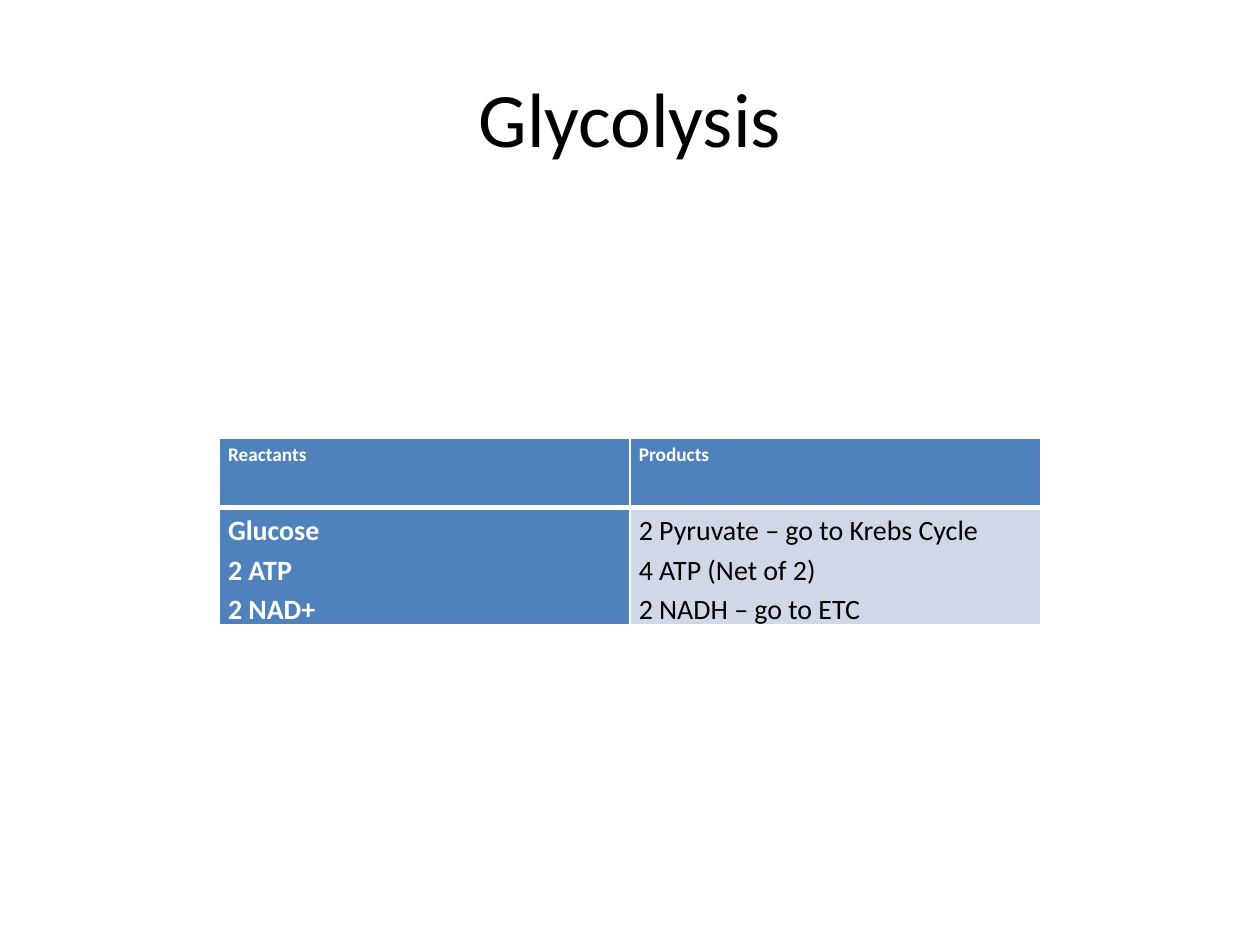
import pptx
import pptx.dml.color
import pptx.enum.text
import pptx.oxml
import pptx.oxml.ns
import pptx.util
import lxml.etree

WIDTH, HEIGHT = 10, 7.5
BLUE, PALE, WHITE, BLACK = "4F81BD", "D0D8E8", "FFFFFF", "000000"


def color(value):
    return pptx.dml.color.RGBColor.from_string(value)


def apply(target, values):
    for name, value in values.items():
        setattr(target, name, value)


class SlideBuilder:
    """Holds the style and the current slide; places are shares of its size."""

    font = "Calibri"
    cell_format = {
        "margin_left": pptx.util.Inches(0.07),
        "margin_right": pptx.util.Inches(0.07),
        "margin_top": pptx.util.Inches(0.01),
        "margin_bottom": 0,
    }
    cell_paragraph = {"line_spacing": 1.15, "space_after": pptx.util.Pt(10)}

    def __init__(self, prs):
        self.prs = prs
        self.s = prs.slides.add_slide(prs.slide_layouts[6])

    def box(self, x, y, w, h):
        sw, sh = self.prs.slide_width, self.prs.slide_height
        return [round(v) for v in (x * sw, y * sh, w * sw, h * sh)]

    def paragraph(self, p, text, size, hue, bold=False):
        p.text = text
        for r in p.runs:
            apply(r.font, {"name": self.font, "size": pptx.util.Pt(size), "bold": bold})
            r.font.color.rgb = color(hue)
        # Line breaks take the size of the text around them
        for br in p._p.findall(pptx.oxml.ns.qn("a:br")):
            lxml.etree.SubElement(br, pptx.oxml.ns.qn("a:rPr"), sz=str(size * 100))

    def title(self, text, place, size):
        tf = self.s.shapes.add_textbox(*self.box(*place)).text_frame
        apply(tf, {"word_wrap": True,
                   "vertical_anchor": pptx.enum.text.MSO_ANCHOR.MIDDLE})
        p = tf.paragraphs[0]
        p.alignment = pptx.enum.text.PP_ALIGN.CENTER
        self.paragraph(p, text, size, BLACK)

    def border(self, cell, side, width):
        ln = pptx.oxml.parse_xml(
            f'<a:ln{side} {pptx.oxml.ns.nsdecls("a")} w="{pptx.util.Pt(width)}">'
            f'<a:solidFill><a:srgbClr val="{WHITE}"/></a:solidFill></a:ln{side}>')
        cell._tc.get_or_add_tcPr().append(ln)

    def cell(self, cell, text, size, fill, hue, bold, borders):
        apply(cell, self.cell_format)
        p = cell.text_frame.paragraphs[0]
        apply(p, self.cell_paragraph)
        self.paragraph(p, text, size, hue, bold)
        # Borders come before the fill in the cell properties
        for side, width in borders.items():
            self.border(cell, side, width)
        cell.fill.solid()
        cell.fill.fore_color.rgb = color(fill)

    def table(self, rows, place, heights):
        table = self.s.shapes.add_table(len(rows), len(rows[0]), *self.box(*place)).table
        apply(table, {"first_row": False, "horz_banding": False})
        for i, (row, height) in enumerate(zip(rows, heights)):
            table.rows[i].height = pptx.util.Inches(height)
            for j, text in enumerate(row):
                head = i == 0
                strong = head or j == 0
                borders = {"L": 1, "R": 1, "T": 1 if head else 3, "B": 3 if head else 1}
                self.cell(table.cell(i, j), text, 11 if head else 16,
                          BLUE if strong else PALE, WHITE if strong else BLACK,
                          strong, borders)


def main():
    prs = pptx.Presentation()
    apply(prs, {"slide_width": pptx.util.Inches(WIDTH),
                "slide_height": pptx.util.Inches(HEIGHT)})
    slide = SlideBuilder(prs)

    # Title across the top
    slide.title("Glycolysis", (0.05, 0.04, 0.9, 1.25 / HEIGHT), 44)

    # Reactants and products
    heights = (0.55, 0.87)
    rows = [
        ("Reactants", "Products"),
        ("Glucose\n2 ATP\n2 NAD+",
         "2 Pyruvate – go to Krebs Cycle\n4 ATP (Net of 2)\n2 NADH – go to ETC"),
    ]
    slide.table(rows, (0.174, 3.48 / HEIGHT, 0.652, sum(heights) / HEIGHT), heights)

    prs.save("out.pptx")


if __name__ == "__main__":
    main()
